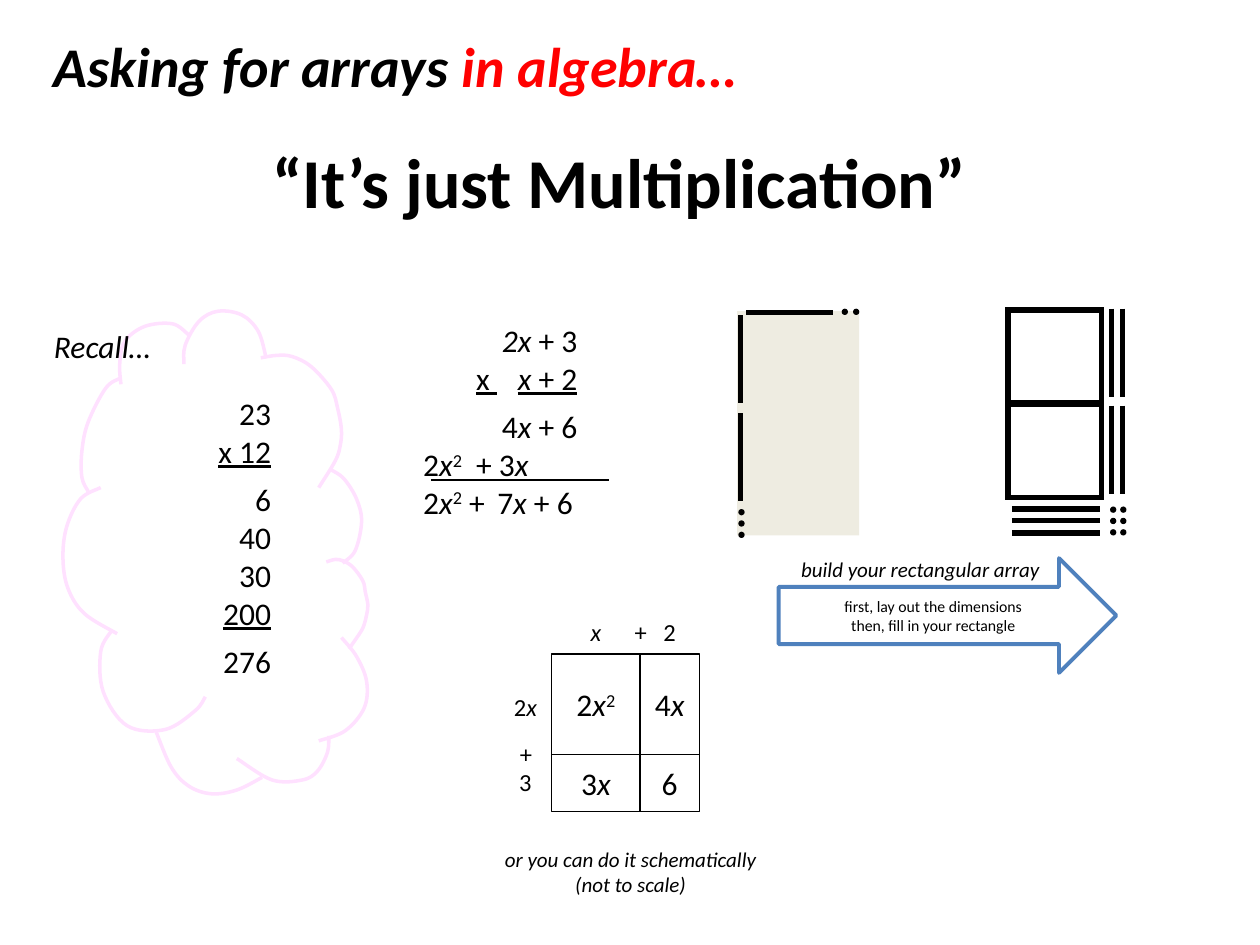
from lxml import etree
from pptx import Presentation
from pptx.dml.color import RGBColor
from pptx.enum.shapes import MSO_CONNECTOR, MSO_SHAPE
from pptx.enum.text import MSO_ANCHOR, PP_ALIGN
from pptx.oxml.ns import qn
from pptx.util import Inches, Pt

LEFT, CENTER, RIGHT = PP_ALIGN.LEFT, PP_ALIGN.CENTER, PP_ALIGN.RIGHT
TOP, MIDDLE = MSO_ANCHOR.TOP, MSO_ANCHOR.MIDDLE
RECTANGLE, OVAL, ARROW = MSO_SHAPE.RECTANGLE, MSO_SHAPE.OVAL, MSO_SHAPE.RIGHT_ARROW
STRAIGHT = MSO_CONNECTOR.STRAIGHT
BLACK, RED, BEIGE, BLUE, PINK = "000000", "FF0000", "EEECE1", "4F81BD", "FFE1FF"


def style_shape(shape, fill=None, line=None, width=1):
    shape.shadow.inherit = False
    if fill:
        shape.fill.solid()
        shape.fill.fore_color.rgb = RGBColor.from_string(fill)
    else:
        shape.fill.background()
    if line:
        shape.line.color.rgb = RGBColor.from_string(line)
        shape.line.width = Pt(width)
    else:
        shape.line.fill.background()


def write_text(shape, paragraphs, size, align, anchor=TOP, spaced=()):
    """Each paragraph is a list of (text, flags, optional letter spacing in points).

    Flags: b, i, u, s(uperscript), r(ed); a newline as text breaks the line.
    spaced holds the indexes of paragraphs with 6 points before them.
    """
    frame = shape.text_frame
    frame.word_wrap = True
    frame.vertical_anchor = anchor
    for index, parts in enumerate(paragraphs):
        paragraph = frame.add_paragraph() if index else frame.paragraphs[0]
        paragraph.alignment = align
        if index in spaced:
            paragraph.space_before = Pt(6)
        for text, flags, *spacing in parts:
            if text == "\n":
                paragraph.add_line_break()
                etree.SubElement(paragraph._p[-1], qn("a:rPr"), sz=str(size * 100))
                continue
            run = paragraph.add_run()
            run.text = text
            font = run.font
            font.name, font.size = "Calibri", Pt(size)
            font.bold, font.italic, font.underline = (flag in flags for flag in "biu")
            font.color.rgb = RGBColor.from_string(RED if "r" in flags else BLACK)
            if "s" in flags:
                run._r.get_or_add_rPr().set("baseline", "30000")
            if spacing:
                run._r.get_or_add_rPr().set("spc", str(spacing[0] * 100))


presentation = Presentation()
presentation.slide_width, presentation.slide_height = Inches(10), Inches(7.5)
slide = presentation.slides.add_slide(presentation.slide_layouts[6])
shapes = slide.shapes

background = shapes.add_shape(RECTANGLE, Inches(5.85), Inches(2.47), Inches(0.97), Inches(1.78))
style_shape(background, BEIGE)
dimensions = shapes.add_group_shape().shapes
filled_array = shapes.add_group_shape().shapes

for top in (2.46, 3.21):
    tile = filled_array.add_shape(RECTANGLE, Inches(8), Inches(top), Inches(0.74), Inches(0.74))
    style_shape(tile, None, BLACK, 3)
    etree.SubElement(tile.line._get_or_add_ln(), qn("a:miter"), lim="800000")

# Bars (x) and dots (1) of the two arrays, and the sum line
bars = [(shapes, 3.42, 3.81, 4.83, 3.81, 0.75), (dimensions, 5.92, 2.48, 6.61, 2.48, 3)]
bars += [(dimensions, 5.88, top, 5.88, top + 0.7, 3) for top in (2.5, 3.28)]
bars += [(filled_array, 8.03, y, 8.73, y, 3) for y in (4.04, 4.13, 4.23)]
bars += [(filled_array, x, top, x, top + 0.7, 3) for x in (8.82, 8.91) for top in (2.45, 3.22)]
for parent, x1, y1, x2, y2, width in bars:
    bar = parent.add_connector(STRAIGHT, Inches(x1), Inches(y1), Inches(x2), Inches(y2))
    bar.line.color.rgb = RGBColor.from_string(BLACK)
    bar.line.width = Pt(width)
    etree.SubElement(bar._element.spPr, qn("a:effectLst"))

dots = [(dimensions, left, 2.45) for left in (6.68, 6.77)]
dots += [(dimensions, 5.86, 4.04 + 0.09 * row) for row in range(3)]
dots += [(filled_array, left, 4.02 + 0.09 * row) for left in (8.81, 8.89) for row in range(3)]
for parent, left, top in dots:
    dot = parent.add_shape(OVAL, Inches(left), Inches(top), Inches(0.05), Inches(0.05))
    style_shape(dot, BLACK)

# Written multiplication
two_x_squared = [("2", ""), ("x", "i"), ("2", "s")]
algebra = [
    [("2x", "i"), (" + 3", "")],
    [("x", "u"), (" ", "u", 12), ("x", "iu"), (" + 2", "u")],
    [("4", ""), ("x", "i"), (" + 6", "")],
    two_x_squared + [(" ", "", 4), ("+ 3", ""), ("x", "i")],
    two_x_squared + [(" +", ""), (" ", "", 3), ("7", ""), ("x", "i"), (" + 6", "")],
]
multiplication = shapes.add_textbox(Inches(3.26), Inches(2.5), Inches(1.42), Inches(1.7))
write_text(multiplication, algebra, 18, RIGHT, TOP, (2,))
for paragraph in multiplication.text_frame.paragraphs[3:]:
    paragraph.alignment = LEFT

# Area model of the product
area_model = shapes.add_group_shape().shapes
cells = [[two_x_squared, [("4", ""), ("x", "i")]],
         [[("3", ""), ("x", "i")], [("6", "")]]]
columns, rows = [(4.38, 0.7), (5.08, 0.47)], [(5.19, 0.8), (5.99, 0.45)]
for (top, height), row_cells in zip(rows, cells):
    for (left, width), content in zip(columns, row_cells):
        cell = area_model.add_shape(RECTANGLE, Inches(left), Inches(top),
                                    Inches(width), Inches(height))
        style_shape(cell, None, BLACK, 0.75)
        write_text(cell, [content], 18, CENTER, MIDDLE)

labels = [(4.38, 4.85, 0.7, [("x", "i")]), (5.08, 4.85, 0.47, [("2", "")]),
          (4.85, 4.85, 0.47, [("+", "")]), (3.96, 5.44, 0.42, [("2", ""), ("x", "i")]),
          (3.96, 6.04, 0.42, [("3", "")]), (3.94, 5.82, 0.47, [("+", "")])]
for left, top, width, content in labels:
    label = area_model.add_textbox(Inches(left), Inches(top), Inches(width), Inches(0.34))
    write_text(label, [content], 14, CENTER)

# Thought cloud: a smooth curve through the points of each lobe
cloud = shapes.add_group_shape().shapes
lobes = [
    [(1.46, 2.89), (1.47, 2.74), (1.58, 2.55), (1.73, 2.47), (1.92, 2.5), (2.05, 2.63),
     (2.11, 2.83)],
    [(2.07, 2.84), (2.2, 2.82), (2.32, 2.83), (2.47, 2.91), (2.63, 3.09), (2.68, 3.24),
     (2.71, 3.41), (2.7, 3.54), (2.66, 3.66), (2.53, 3.87)],
    [(2.63, 3.73), (2.73, 3.8), (2.83, 3.96), (2.87, 4.14), (2.82, 4.37), (2.72, 4.47)],
    [(0.96, 3.05), (0.95, 2.89), (0.99, 2.71), (1.15, 2.59), (1.37, 2.57), (1.5, 2.66)],
    [(2.59, 4.46), (2.66, 4.44), (2.72, 4.45), (2.8, 4.5), (2.88, 4.61), (2.9, 4.7),
     (2.92, 4.8), (2.91, 4.88), (2.89, 4.96), (2.86, 5.02), (2.77, 5.15)],
    [(2.61, 5.84), (2.6, 5.97), (2.52, 6.12), (2.4, 6.19), (2.16, 6.19), (1.88, 6.02)],
    [(2.71, 5.06), (2.83, 5.21), (2.91, 5.41), (2.89, 5.62), (2.74, 5.8), (2.53, 5.88)],
    [(0.93, 5.03), (0.67, 4.87), (0.54, 4.67), (0.5, 4.43), (0.53, 4.18), (0.64, 3.96),
     (0.8, 3.87)],
    [(0.7, 3.9), (0.65, 3.79), (0.65, 3.58), (0.7, 3.35), (0.84, 3.08), (0.96, 3)],
    [(0.89, 5), (0.8, 5.17), (0.82, 5.49), (1.01, 5.76), (1.31, 5.79), (1.55, 5.64),
     (1.63, 5.53)],
    [(1.24, 5.81), (1.36, 6.09), (1.5, 6.24), (1.68, 6.3), (1.88, 6.27), (2.08, 6.17)],
]
for lobe in lobes:
    points = [(Inches(x), Inches(y)) for x, y in lobe]
    builder = cloud.build_freeform(*points[0])
    builder.add_line_segments(points[1:], close=False)
    curve = builder.convert_to_shape()
    style_shape(curve, None, PINK, 2)
    left, top = (min(axis) for axis in zip(*points))
    padded = [points[0], *points, points[-1]]
    segments = list(curve._element.iter(qn("a:lnTo")))
    for segment, before, start, end, after in zip(segments, padded, padded[1:], padded[2:],
                                                  padded[3:]):
        segment.tag = qn("a:cubicBezTo")
        first = [s + (e - b) / 6 for b, s, e in zip(before, start, end)]
        second = [e - (a - s) / 6 for s, e, a in zip(start, end, after)]
        for position, (x, y) in enumerate((first, second)):
            control = etree.Element(qn("a:pt"), x=str(round(x - left)), y=str(round(y - top)))
            segment.insert(position, control)

arrow = shapes.add_shape(ARROW, Inches(6.18), Inches(4.43), Inches(2.68), Inches(0.91))
style_shape(arrow, None, BLUE, 2.25)
instructions = [("first, lay out the dimensions", ""), ("\n", ""),
                ("then, fill in your rectangle", "")]
write_text(arrow, [instructions], 9, CENTER, MIDDLE)

# Text boxes: left, top, width, height, paragraphs, size, alignment, anchor, spaced paragraphs
numbers = [[("23", "")], [("x 12", "u")], [("6", "")], [("40", "")], [("30", "")],
           [("200", "u")], [("276", "")]]
text_boxes = [
    (0.33, 2.55, 2.75, 0.4, [[("Recall…", "i")]], 18, LEFT, TOP, ()),
    (1.25, 3.08, 1, 2.72, numbers, 18, RIGHT, TOP, (2, 6)),
    (6.26, 4.37, 2.45, 0.3, [[("build your rectangular array", "i")]], 12, LEFT, TOP, ()),
    (3.78, 6.67, 2.45, 0.5, [[("or you can do it schematically (not to scale)", "i")]],
     12, CENTER, TOP, ()),
    (0.33, 0.01, 9.17, 1.01, [[("Asking for arrays ", "bi"), ("in algebra…", "bir")]],
     32, LEFT, MIDDLE, ()),
    (0.33, 0.93, 9.17, 1.01, [[("“It’s just Multiplication”", "b")]], 40, CENTER, MIDDLE, ()),
]
for left, top, width, height, *content in text_boxes:
    box = shapes.add_textbox(Inches(left), Inches(top), Inches(width), Inches(height))
    write_text(box, *content)

presentation.save("out.pptx")
